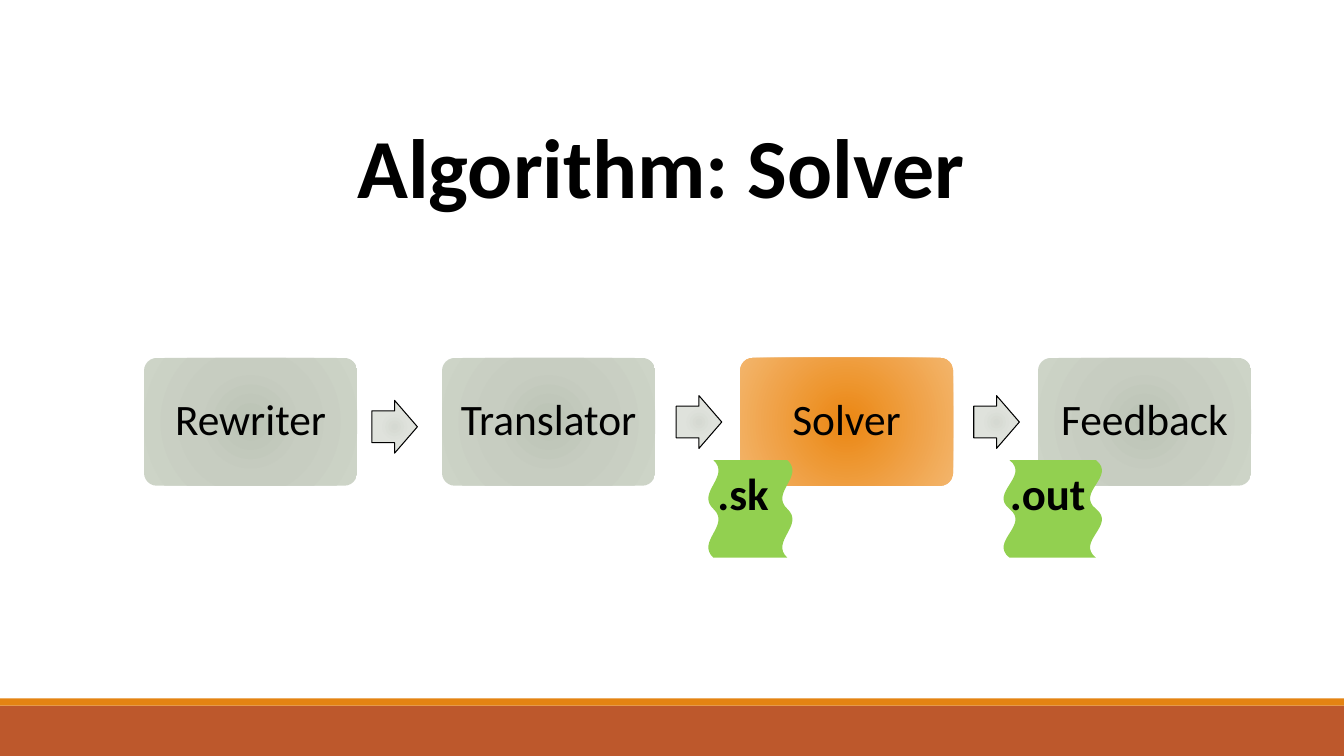
from dataclasses import dataclass

from lxml.etree import SubElement
from pptx import Presentation
from pptx.dml.color import RGBColor
from pptx.enum.shapes import MSO_SHAPE as Preset
from pptx.enum.text import MSO_ANCHOR as Anchor, MSO_AUTO_SIZE as AutoSize, PP_ALIGN as Align
from pptx.oxml.ns import qn
from pptx.util import Cm, Pt


@dataclass(frozen=True)
class Theme:
    font: str = "Calibri"
    title_size: float = 60
    stage_size: float = 31
    file_size: float = 32
    ink: str = "000000"
    base_band: str = "BD582C"
    accent_band: str = "E48312"
    file_tag: str = "92D050"
    idle: tuple = ((0, "BBC3B5"), (45, "C7CDC1"), (100, "CDD4C7"))
    active: tuple = ((0, "EB8713"), (100, "F3B56C"))
    arrow: tuple = ((0, "D5D9D2"), (45, "DFE2DC"), (100, "E3E6E0"))


def assign(target, values):
    for name, value in values.items():
        setattr(target, name, value)


class PipelineSlide:
    def __init__(self, deck, theme):
        self.theme = theme
        self.slide = deck.slides.add_slide(deck.slide_layouts[5])

    def label(self, holder, text, size, bold=False, align=Align.LEFT, spacing=1.0, **frame_format):
        frame = holder.text_frame
        assign(frame, {"word_wrap": True, "auto_size": AutoSize.NONE,
                       "vertical_anchor": Anchor.TOP, **frame_format})
        paragraph = frame.paragraphs[0]
        assign(paragraph, {"alignment": align, "line_spacing": spacing})
        run = paragraph.add_run()
        run.text = text
        assign(run.font, {"name": self.theme.font, "size": Pt(size), "bold": bold})
        run.font.color.rgb = RGBColor.from_string(self.theme.ink)

    def title(self, text, box):
        heading = self.slide.shapes.title
        assign(heading, dict(zip(("left", "top", "width", "height"), map(Cm, box))))
        self.label(heading, text, self.theme.title_size, True, Align.CENTER)

    def block(self, preset, box, fill, adjustments=(), rotation=0):
        block = self.slide.shapes.add_shape(preset, *map(Cm, box))
        block.shadow.inherit = False
        block.rotation = rotation
        block.line.fill.background()
        for index, value in enumerate(adjustments):
            block.adjustments[index] = value
        if isinstance(fill, str):
            block.fill.solid()
            block.fill.fore_color.rgb = RGBColor.from_string(fill)
        else:
            self.radial(block, fill)
        return block

    def radial(self, block, stops):
        block.fill.gradient()
        gradient = block.element.spPr.find(qn("a:gradFill"))
        for child in list(gradient):
            gradient.remove(child)
        stop_list = SubElement(gradient, qn("a:gsLst"))
        for percent, color in stops:
            stop = SubElement(stop_list, qn("a:gs"), {"pos": str(percent * 1000)})
            SubElement(stop, qn("a:srgbClr"), {"val": color})
        circle = SubElement(gradient, qn("a:path"), {"path": "circle"})
        SubElement(circle, qn("a:fillToRect"), dict.fromkeys("ltrb", "50000"))

    def stage(self, name, box, fill):
        card = self.block(Preset.ROUNDED_RECTANGLE, box, fill, (0.1,))
        margins = dict.fromkeys(("margin_left", "margin_right", "margin_top", "margin_bottom"), Cm(0.3))
        self.label(card, name, self.theme.stage_size, align=Align.CENTER, spacing=0.9,
                   vertical_anchor=Anchor.MIDDLE, **margins)

    def arrow(self, left, top):
        arrow = self.block(Preset.RIGHT_ARROW, (left, top, 1.15, 1.33), self.theme.arrow, (0.6, 0.5))
        arrow.line.color.rgb = RGBColor.from_string(self.theme.ink)
        arrow.line.width = Pt(0.75)

    def file_tag(self, extension, wave_box, label_box):
        self.block(Preset.DOUBLE_WAVE, wave_box, self.theme.file_tag, rotation=90)
        caption = self.slide.shapes.add_textbox(*map(Cm, label_box))
        self.label(caption, extension, self.theme.file_size, True)


def main():
    deck = Presentation()
    slide_width = 33.87
    assign(deck, {"slide_width": Cm(slide_width), "slide_height": Cm(19.05)})
    theme = Theme()
    page = PipelineSlide(deck, theme)

    page.block(Preset.RECTANGLE, (0, 17.78, slide_width, 1.27), theme.base_band)
    page.block(Preset.RECTANGLE, (0, 17.6, slide_width, 0.18), theme.accent_band)
    page.title("Algorithm: Solver", (1.45, 2.77, 30.43, 2.82))

    current_stage = "Solver"
    for index, name in enumerate(("Rewriter", "Translator", "Solver", "Feedback")):
        fill = theme.active if name == current_stage else theme.idle
        page.stage(name, (3.63 + 7.51 * index, 9.02, 5.37, 3.22), fill)
    for left, top in ((9.37, 10.09), (17.04, 9.97), (24.54, 9.97)):
        page.arrow(left, top)

    page.file_tag(".sk", (17.68, 11.76, 2.46, 2.13), (17.83, 11.61, 2.13, 1.63))
    page.file_tag(".out", (25.3, 11.58, 2.46, 2.49), (25.2, 11.61, 2.84, 1.63))
    deck.save("out.pptx")


if __name__ == "__main__":
    main()
